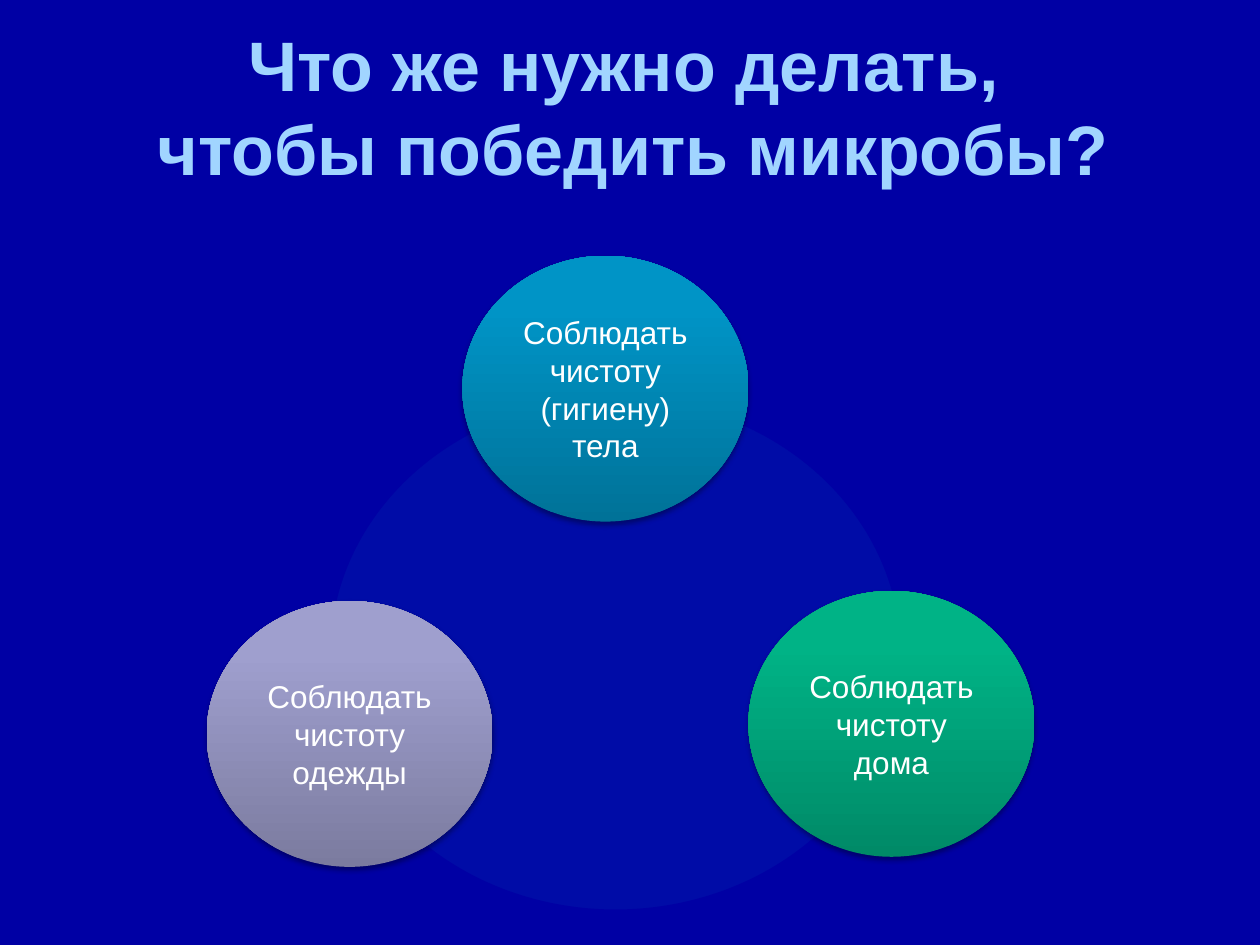
from lxml.etree import SubElement
from pptx import Presentation
from pptx.dml.color import RGBColor
from pptx.enum.shapes import MSO_SHAPE
from pptx.enum.text import MSO_ANCHOR, PP_ALIGN
from pptx.oxml.ns import qn
from pptx.util import Inches, Pt

BACKGROUND, TITLE, RING, WHITE = "0000A4", "A1D5FF", "0099CC", "FFFFFF"
CIRCLE_W, CIRCLE_H = 2.27, 2.11
CIRCLES = [
    (3.67, 2.03, "Соблюдать чистоту (гигиену) тела", ("007298", "0094C6", "0095C7")),
    (1.64, 4.77, "Соблюдать чистоту одежды", ("7B7B9F", "9F9FCE", "9F9FD0")),
    (5.94, 4.69, "Соблюдать чистоту дома", ("008A67", "00B386", "00B486")),
]


def rgb(color):
    return RGBColor.from_string(color)


def add(parent, tag, **attributes):
    return SubElement(parent, qn(tag), {k: str(v) for k, v in attributes.items()})


def add_color(parent, color, alpha):
    """Append a colour whose alpha is given in percent."""
    add(add(parent, "a:srgbClr", val=color), "a:alpha", val=alpha * 1000)


def format_text(tf, size, color, bold=False):
    tf.word_wrap = True
    for p in tf.paragraphs:
        p.alignment = PP_ALIGN.CENTER
        for r in p.runs:
            r.font.name, r.font.size, r.font.bold = "Arial", Pt(size), bold
            r.font.color.rgb = rgb(color)


def add_ellipse(s, box):
    sp = s.shapes.add_shape(MSO_SHAPE.OVAL, *map(Inches, box))
    sp.shadow.inherit = False
    return sp


def fill_gradient(sp, colors):
    sp.line.fill.background()
    sp.fill.gradient()
    sp.fill.gradient_angle = 90
    stops = sp.fill._fill._gradFill.find(qn("a:gsLst"))
    stops.clear()
    for position, color in zip((0, 80, 100), colors):
        add(add(stops, "a:gs", pos=position * 1000), "a:srgbClr", val=color)


def cast_shadow(sp):
    effects = sp._element.spPr.find(qn("a:effectLst"))
    shadow = add(effects, "a:outerShdw", blurRad=Pt(3.1), dist=Pt(1.8),
                 dir=90 * 60000, rotWithShape=0)
    add_color(shadow, "000000", 35)


def place_title(s, box):
    title = s.shapes.title
    title.left, title.top, title.width, title.height = map(Inches, box)
    tf = title.text_frame
    tf.text = "Что же нужно делать, \nчтобы победить микробы?"
    tf.vertical_anchor = MSO_ANCHOR.TOP
    format_text(tf, 40, TITLE, bold=True)


def place_ring(s, box):
    ring = add_ellipse(s, box)
    ring.fill.solid()
    ring.fill.fore_color.rgb = rgb(RING)
    color = ring._element.spPr.find(qn("a:solidFill"))[0]
    add(color, "a:alpha", val=8000)
    ring.line.color.rgb = rgb(BACKGROUND)
    ring.line.width = Pt(6)


def place_circle(s, box, text, colors):
    circle = add_ellipse(s, box)
    fill_gradient(circle, colors)
    cast_shadow(circle)
    tf = circle.text_frame
    tf.text = text
    tf.vertical_anchor = MSO_ANCHOR.MIDDLE
    format_text(tf, 18, WHITE)


def main():
    prs = Presentation()
    prs.slide_width, prs.slide_height = Inches(10), Inches(7.5)
    s = prs.slides.add_slide(prs.slide_layouts[5])
    s.background.fill.solid()
    s.background.fill.fore_color.rgb = rgb(BACKGROUND)
    place_title(s, (0.22, 0.12, 9.61, 1.45))
    place_ring(s, (2.58, 3.12, 4.61, 4.14))
    for left, top, text, colors in CIRCLES:
        place_circle(s, (left, top, CIRCLE_W, CIRCLE_H), text, colors)
    prs.save("out.pptx")


if __name__ == "__main__":
    main()
